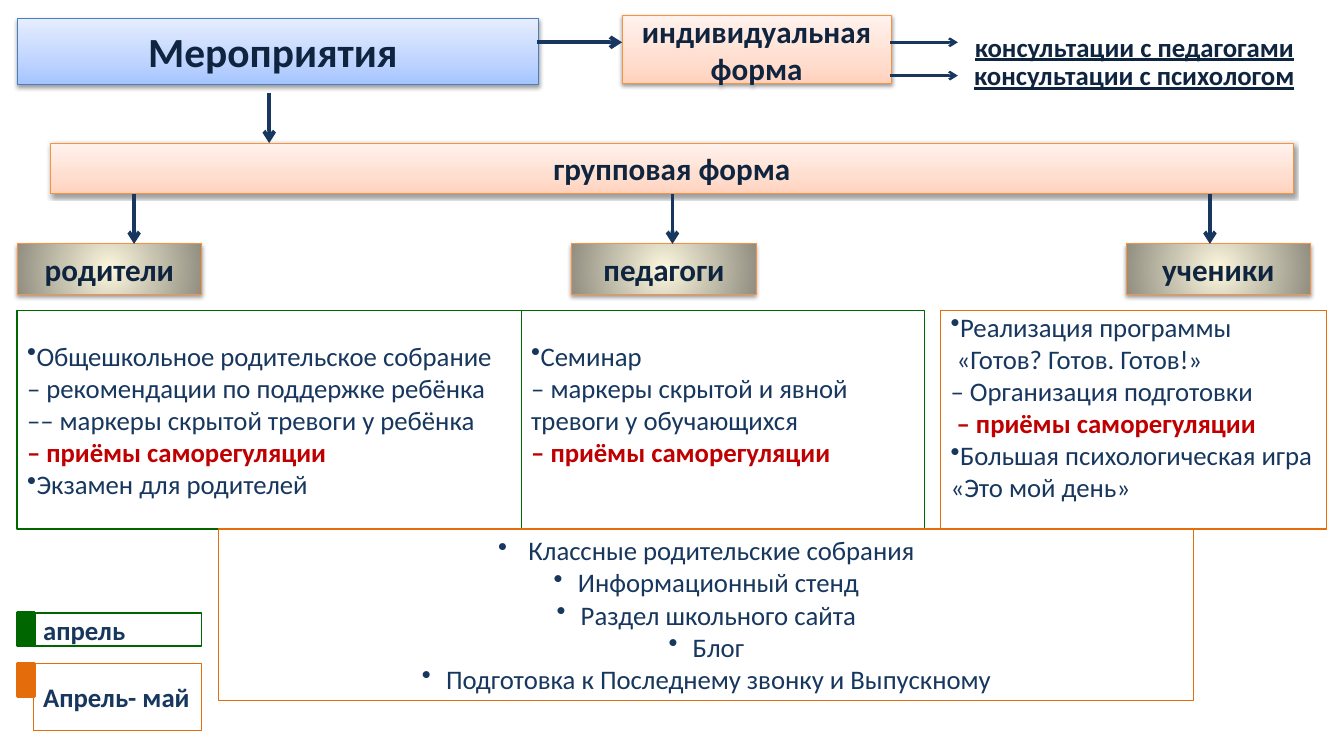
from dataclasses import dataclass

from pptx import Presentation
from pptx.dml.color import RGBColor
from pptx.enum.shapes import MSO_CONNECTOR, MSO_SHAPE
from pptx.enum.text import MSO_ANCHOR, PP_ALIGN
from pptx.oxml import parse_xml
from pptx.oxml.ns import nsdecls, qn
from pptx.oxml.xmlchemy import OxmlElement
from pptx.util import Inches, Pt


@dataclass(frozen=True)
class Theme:
    font: str = "Calibri"
    heading: str = "0F243E"
    body: str = "17375E"
    accent: str = "C00000"
    green: str = "006600"
    orange: str = "E46C0A"
    blue_line: str = "4B7EBC"
    peach_line: str = "F69240"
    blue: tuple = ((0, "A4C4FF"), (35, "BFD4FF"), (100, "E6EEFF"))
    peach: tuple = ((0, "FFD2BD"), (35, "FFDED0"), (100, "FFF2ED"))
    khaki: tuple = ((0, "FCF7DD"), (100, "918E81"))
    title_size: float = 29.6
    heading_size: float = 22.2
    body_size: float = 19.1


theme = Theme()
deck = Presentation()
deck.slide_width, deck.slide_height = Inches(13.33), Inches(7.5)
page = deck.slides.add_slide(deck.slide_layouts[6])


def add_panel(place, line, weight=1, fill=None, stops=None, radial=False):
    box = page.shapes.add_shape(MSO_SHAPE.RECTANGLE, *map(Inches, place))
    box.shadow.inherit = False
    box.line.color.rgb = RGBColor.from_string(line)
    box.line.width = Pt(weight)
    if fill:
        box.fill.solid()
        box.fill.fore_color.rgb = RGBColor.from_string(fill)
    elif not stops:
        box.fill.background()
    else:
        box.fill.gradient()
        properties = box._element.spPr
        colours = "".join(
            f'<a:gs pos="{position * 1000}"><a:srgbClr val="{colour}"/></a:gs>'
            for position, colour in stops
        )
        direction = (
            '<a:path path="circle"><a:fillToRect l="50000" t="50000" r="50000" b="50000"/></a:path>'
            if radial else '<a:lin ang="16200000" scaled="0"/>'
        )
        properties.replace(properties.find(qn("a:gradFill")), parse_xml(
            f'<a:gradFill {nsdecls("a")} rotWithShape="1">'
            f"<a:gsLst>{colours}</a:gsLst>{direction}</a:gradFill>"
        ))
        properties.find(qn("a:effectLst")).append(parse_xml(
            f'<a:outerShdw {nsdecls("a")} blurRad="{Pt(3.1)}" dist="{Pt(1.6)}" '
            'dir="5400000" rotWithShape="0"><a:srgbClr val="000000">'
            '<a:alpha val="38000"/></a:srgbClr></a:outerShdw>'
        ))
    return box


def write_text(box, text, size=theme.body_size, color=theme.body, bold=False,
               underline=False, align=PP_ALIGN.LEFT, anchor=MSO_ANCHOR.MIDDLE,
               insets=(0.1, 0.05, 0.1, 0.05), hanging=0):
    frame = box.text_frame
    frame.word_wrap = True
    frame.vertical_anchor = anchor
    (frame.margin_left, frame.margin_top,
     frame.margin_right, frame.margin_bottom) = map(Inches, insets)
    for index, line in enumerate(text.split("\n")):
        para = frame.paragraphs[0] if index == 0 else frame.add_paragraph()
        para.alignment = align
        if line.startswith("•"):
            properties = para._p.get_or_add_pPr()
            properties.set("marL", str(Inches(hanging)))
            properties.set("indent", str(-Inches(hanging)))
            bullet = OxmlElement("a:buChar")
            bullet.set("char", "•")
            properties.append(bullet)
        emphasis = "приёмы саморегуляции" in line
        span = para.add_run()
        span.text = line.removeprefix("•")
        span.font.name = theme.font
        span.font.size = Pt(size)
        span.font.bold = bold or emphasis
        span.font.underline = underline
        span.font.color.rgb = RGBColor.from_string(theme.accent if emphasis else color)


heading_format = dict(size=theme.heading_size, color=theme.heading, bold=True,
                      align=PP_ALIGN.CENTER, insets=(0.12, 0.06, 0.12, 0.06))

title = add_panel((0.17, 0.18, 5.17, 0.66), theme.blue_line, 0.75, stops=theme.blue)
write_text(title, "Мероприятия ", **heading_format | dict(
    size=theme.title_size, insets=(0.06, 0.03, 0.06, 0.03)))

for text, place in (
    ("индивидуальная форма", (6.17, 0.15, 2.67, 0.68)),
    ("групповая форма", (0.5, 1.42, 12.33, 0.5)),
):
    write_text(add_panel(place, theme.peach_line, 0.75, stops=theme.peach), text, **heading_format)

for text, top, height in (
    ("консультации с педагогами", 0.25, 0.42),
    ("консультации с психологом", 0.58, 0.33),
):
    box = page.shapes.add_textbox(Inches(9.5), Inches(top), Inches(3.5), Inches(height))
    write_text(box, text, **heading_format | dict(size=theme.body_size, underline=True))

for text, left in (("родители", 0.17), ("педагоги", 5.67), ("ученики", 11.17)):
    box = add_panel((left, 2.42, 1.83, 0.5), theme.peach_line, 0.75,
                    stops=theme.khaki, radial=True)
    write_text(box, text, **heading_format)

arrows = [
    (5.33, 0.42, 6.17, 0.42, 2.75),
    (2.67, 0.92, 2.67, 1.42, 2.75),
    *((8.83, level, 9.5, level, 1.75) for level in (0.42, 0.75)),
    *((across, 1.92, across, 2.42, 2.75) for across in (1.33, 6.67, 12)),
]
for *ends, weight in arrows:
    arrow = page.shapes.add_connector(MSO_CONNECTOR.STRAIGHT, *map(Inches, ends))
    arrow.line.color.rgb = RGBColor.from_string(theme.body)
    arrow.line.width = Pt(weight)
    tip = OxmlElement("a:tailEnd")
    tip.set("type", "arrow")
    arrow.line._get_or_add_ln().append(tip)
    arrow._element.spPr.append(OxmlElement("a:effectLst"))

parents = add_panel((0.17, 3.08, 5, 2.17), theme.green)
write_text(parents, """•Общешкольное родительское собрание
– рекомендации по поддержке ребёнка –– маркеры скрытой тревоги у ребёнка
– приёмы саморегуляции
•Экзамен для родителей""")

teachers = add_panel((5.17, 3.08, 4, 2.17), theme.green)
write_text(teachers, """•Семинар
– маркеры скрытой и явной тревоги у обучающихся
– приёмы саморегуляции""", insets=(0.1, 0.05, 0.1, 0.37))

shared = add_panel((2.17, 5.25, 9.67, 1.7), theme.orange)
write_text(shared, """• Классные родительские собрания
•Информационный стенд
•Раздел школьного сайта
•Блог
•Подготовка к Последнему звонку и Выпускному""",
           align=PP_ALIGN.CENTER, anchor=MSO_ANCHOR.TOP, hanging=0.24)

pupils = add_panel((9.33, 3.08, 3.83, 2.17), theme.orange)
write_text(pupils, """•Реализация программы
 «Готов? Готов. Готов!»
– Организация подготовки
 – приёмы саморегуляции
•Большая психологическая игра «Это мой день»""",
           anchor=MSO_ANCHOR.TOP, insets=(0.1, 0, 0.1, 0))

for text, top, height, color in (
    ("апрель", 6.08, 0.33, theme.green),
    ("Апрель- май", 6.58, 0.67, theme.orange),
):
    label = add_panel((0.33, top, 1.67, height), color)
    write_text(label, text, bold=True, insets=(0.1, 0, 0, 0))
    add_panel((0.17, top, 0.17, 0.33), color, 2, fill=color)

deck.save("out.pptx")
